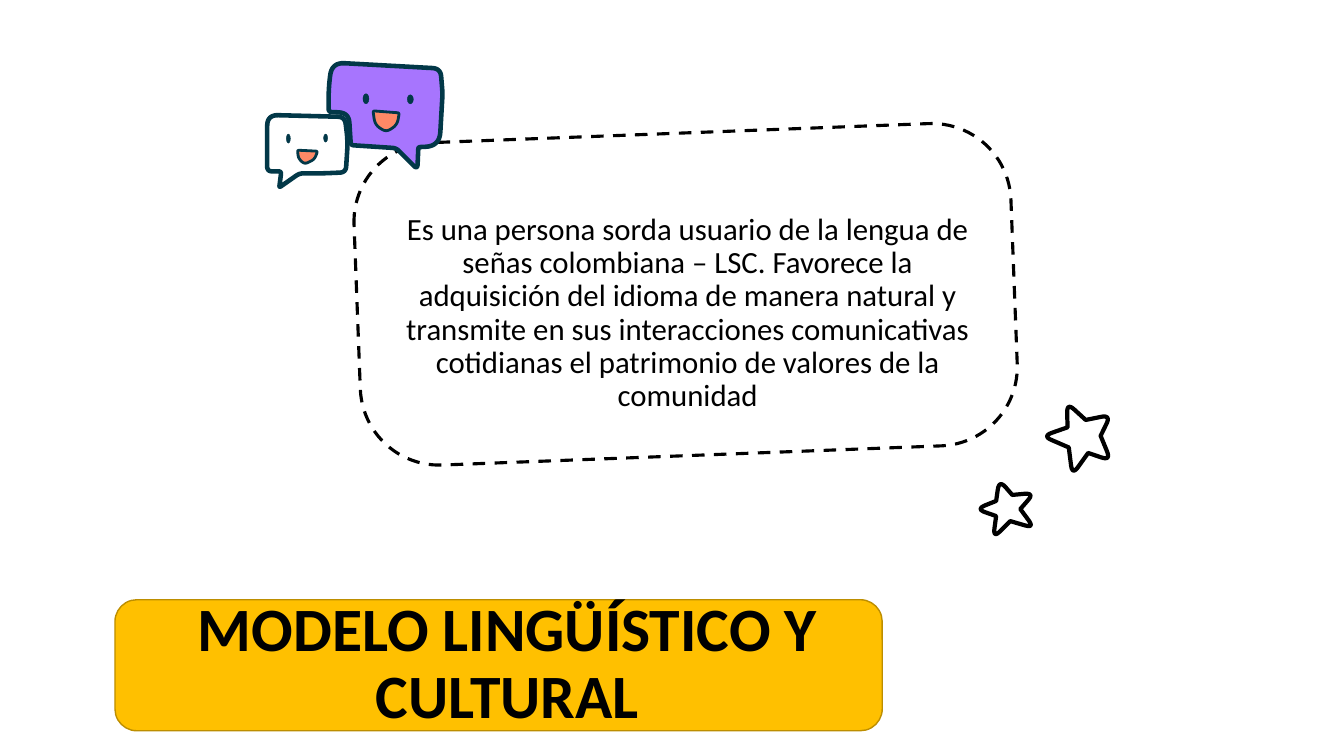
"""Build the slide on the linguistic and cultural model."""
from math import dist

from lxml.etree import SubElement
from pptx import Presentation
from pptx.dml.color import RGBColor
from pptx.enum.dml import MSO_LINE
from pptx.enum.shapes import MSO_SHAPE
from pptx.enum.text import MSO_ANCHOR, MSO_AUTO_SIZE, PP_ALIGN
from pptx.oxml.ns import qn
from pptx.util import Inches, Pt

INK, NAVY, WHITE = "000000", "023848", "FFFFFF"


def paint(shape, fill, line, width):
    """Give a shape its fill and outline, without a shadow."""
    shape.shadow.inherit = False
    if fill:
        shape.fill.solid()
        shape.fill.fore_color.rgb = RGBColor.from_string(fill)
    else:
        shape.fill.background()
    shape.line.color.rgb = RGBColor.from_string(line)
    shape.line.width = Pt(width)


def add_rounded(shapes, corners, fill, line, width):
    """Draw a polygon whose corners (x, y, cut) are rounded off."""
    points = []
    for index, (x, y, cut) in enumerate(corners):
        ends = []
        for other in (corners[index - 1], corners[(index + 1) % len(corners)]):
            share = cut / dist((x, y), other[:2])
            ends.append((x + (other[0] - x) * share, y + (other[1] - y) * share))
        (ax, ay), (bx, by) = ends
        for step in range(9 if cut else 1):
            t = step / 8
            points.append((
                Inches((1 - t) ** 2 * ax + 2 * t * (1 - t) * x + t * t * bx),
                Inches((1 - t) ** 2 * ay + 2 * t * (1 - t) * y + t * t * by),
            ))
    builder = shapes.build_freeform(*points[0], scale=1.0)
    builder.add_line_segments(points[1:], close=True)
    shape = builder.convert_to_shape()
    paint(shape, fill, line, width)
    return shape


deck = Presentation()
deck.slide_width, deck.slide_height = Inches(13.33), Inches(7.5)
page = deck.slides.add_slide(deck.slide_layouts[1])
shapes = page.shapes
title, body = shapes.title, page.placeholders[1]

frame = shapes.add_shape(MSO_SHAPE.ROUNDED_RECTANGLE, Inches(3.54), Inches(1.32), Inches(6.52), Inches(3.2))
frame.adjustments[0] = 0.245
frame.rotation = 357.8
paint(frame, None, INK, 2.25)
frame.line.dash_style = MSO_LINE.DASH

stars = [
    (0,
     [(9.91, 4.76), (9.68, 5.05), (9.85, 5.34), (10.26, 5.24), (10.26, 4.89)],
     [(9.88, 4.97), (9.88, 5.12), (10.02, 5.17), (10.12, 5.05), (10.04, 4.91)]),
    (33.4,
     [(10.84, 4), (10.41, 4.14), (10.39, 4.55), (10.85, 4.71), (11.09, 4.38)],
     [(10.66, 4.18), (10.55, 4.34), (10.67, 4.5), (10.86, 4.44), (10.87, 4.23)]),
]
for rotation, tips, notches in stars:
    corners = []
    for tip, notch in zip(tips, notches):
        corners += [(*tip, 0.1), (*notch, 0)]
    star = add_rounded(shapes, corners, WHITE, INK, 3)
    star.rotation = rotation

banner = shapes.add_shape(MSO_SHAPE.ROUNDED_RECTANGLE, Inches(1.14), Inches(5.95), Inches(7.61), Inches(1.3))
paint(banner, "FFC000", "BD8E00", 1)

texts = [
    (title, (0.99, 5.95, 8.09, 1.3), MSO_ANCHOR.MIDDLE, 44, True,
     "MODELO LINGÜÍSTICO Y CULTURAL"),
    (body, (3.91, 2.02, 5.82, 2.17), MSO_ANCHOR.TOP, 22, False,
     "Es una persona sorda usuario de la lengua de señas colombiana – LSC. "
     "Favorece la adquisición del idioma de manera natural y transmite en sus "
     "interacciones comunicativas cotidianas el patrimonio de valores de la comunidad"),
]
for box, place, anchor, size, bold, words in texts:
    shapes._spTree.append(box._element)
    box.left, box.top, box.width, box.height = [Inches(length) for length in place]
    text = box.text_frame
    text.word_wrap = True
    text.auto_size = MSO_AUTO_SIZE.NONE
    text.vertical_anchor = anchor
    text.margin_left = text.margin_right = text.margin_top = text.margin_bottom = Inches(0.1)
    para = text.paragraphs[0]
    para.alignment = PP_ALIGN.CENTER
    para.line_spacing = 0.9
    para.space_before = Pt(0)
    properties = para._p.get_or_add_pPr()
    properties.set("marL", "0")
    properties.set("indent", "0")
    SubElement(properties, qn("a:buNone"))
    span = para.add_run()
    span.text = words
    span.font.name = "Calibri"
    span.font.size = Pt(size)
    span.font.bold = bold
    span.font.color.rgb = RGBColor.from_string(INK)

bubbles = [
    ("A775FE",
     [(3.29, 0.62, 0.13), (4.37, 0.68, 0.08), (4.39, 0.93, 0.05), (4.36, 1.45, 0.14),
      (4.15, 1.46, 0.02), (4.14, 1.68, 0.05), (3.93, 1.47, 0.04), (3.48, 1.44, 0.03),
      (3.46, 1.12, 0.1), (3.26, 1.11, 0.03), (3.26, 0.88, 0.1)],
     [(3.7, 1.1, 0.02), (3.96, 1.12, 0.02), (3.94, 1.24, 0.06), (3.83, 1.31, 0.05), (3.72, 1.24, 0.06)],
     [(3.6, 0.93, 0.06, 0.1), (4.04, 0.94, 0.06, 0.09)]),
    (WHITE,
     [(2.65, 1.14, 0.11), (3.42, 1.16, 0.07), (3.45, 1.4, 0.1), (3.43, 1.71, 0.06),
      (3.2, 1.72, 0.05), (2.97, 1.72, 0.04), (2.77, 1.86, 0.02), (2.79, 1.7, 0.03),
      (2.65, 1.7, 0.05), (2.65, 1.4, 0.05)],
     [(2.95, 1.49, 0.02), (3.15, 1.5, 0.02), (3.12, 1.58, 0.04), (3.02, 1.63, 0.04), (2.96, 1.57, 0.03)],
     [(2.84, 1.33, 0.04, 0.09), (3.21, 1.33, 0.04, 0.08)]),
]
faces = shapes.add_group_shape().shapes
for colour, outline, mouth, eyes in bubbles:
    add_rounded(faces, outline, colour, NAVY, 3.25)
    add_rounded(faces, mouth, "FE8966", NAVY, 2)
    for place in eyes:
        eye = faces.add_shape(MSO_SHAPE.OVAL, *[Inches(length) for length in place])
        paint(eye, NAVY, NAVY, 0.25)

deck.save("out.pptx")
